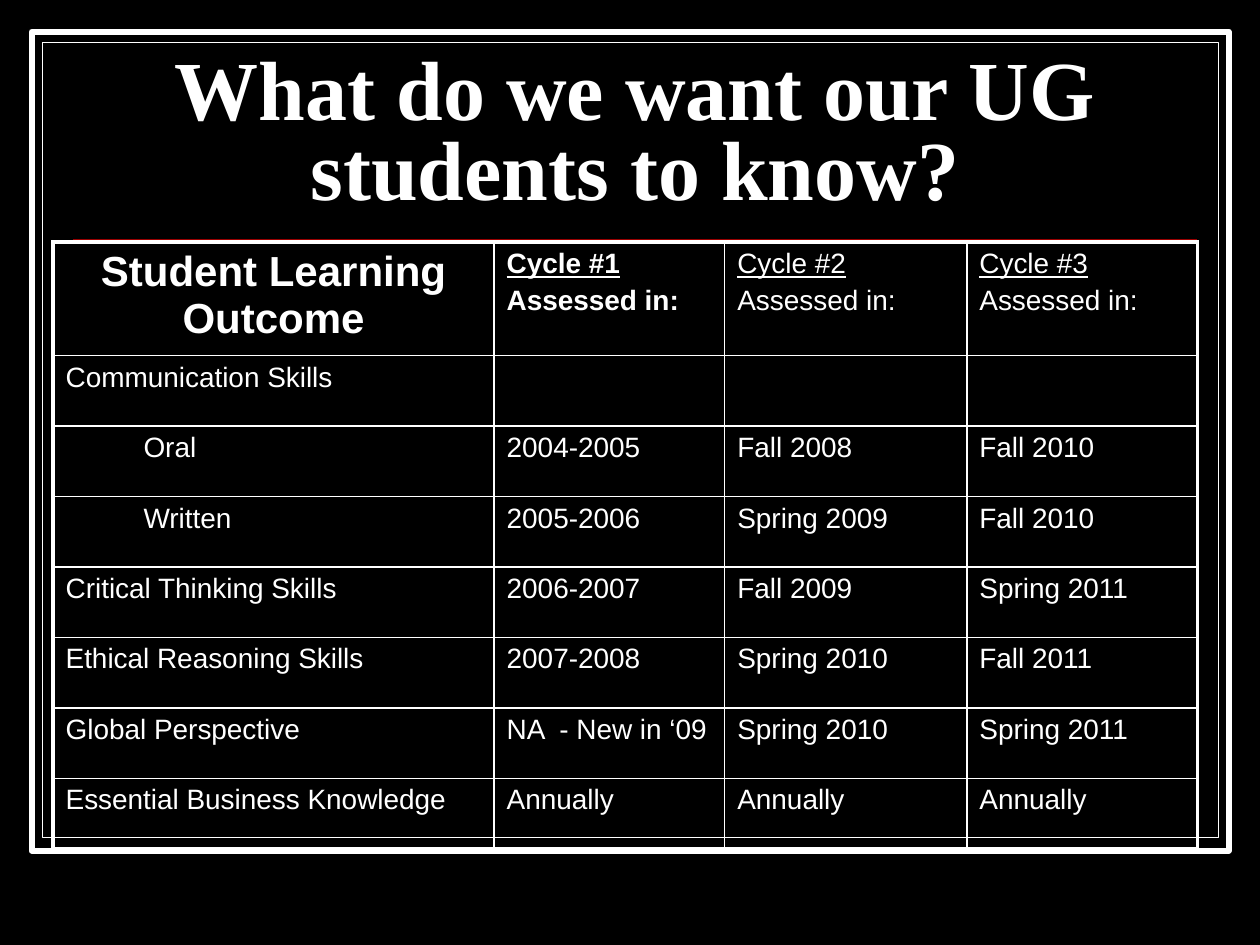
from dataclasses import dataclass

from lxml.etree import SubElement
from pptx import Presentation
from pptx.dml.color import RGBColor
from pptx.enum.shapes import MSO_CONNECTOR as Connector, MSO_SHAPE as Preset
from pptx.enum.text import MSO_ANCHOR as Anchor, MSO_AUTO_SIZE as AutoSize, PP_ALIGN as Align
from pptx.oxml.ns import qn
from pptx.slide import Slide
from pptx.table import _Cell as Cell
from pptx.util import Cm, Pt


@dataclass(frozen=True)
class Theme:
    """Colours, fonts and sizes in points."""
    ground: RGBColor = RGBColor(0, 0, 0)
    ink: RGBColor = RGBColor(255, 255, 255)
    rule: RGBColor = RGBColor(0x99, 0, 0)
    title_font: str = "Times New Roman"
    table_font: str = "Arial"
    title_size: float = 48
    heading_size: float = 24
    body_size: float = 16
    thin: float = 1
    thick: float = 2.25


@dataclass(frozen=True)
class Frame:
    """A framing rectangle in centimetres, with its line width in points."""
    left: float
    top: float
    width: float
    height: float
    line: float


@dataclass(frozen=True)
class Outcome:
    """A learning outcome and when each cycle assesses it."""
    skill: str
    cycles: tuple[str, str, str] = ("", "", "")
    nested: bool = False


THEME = Theme()
FRAMES = (Frame(0.64, 0.64, 24.13, 16.51, 3.5), Frame(0.86, 0.86, 23.7, 16.03, 0.75))
CYCLE_NAMES = ("Cycle #1", "Cycle #2", "Cycle #3")
OUTCOMES = (
    Outcome("Communication Skills"),
    Outcome("Oral", ("2004-2005", "Fall 2008", "Fall 2010"), nested=True),
    Outcome("Written", ("2005-2006", "Spring 2009", "Fall 2010"), nested=True),
    Outcome("Critical Thinking Skills", ("2006-2007", "Fall 2009", "Spring 2011")),
    Outcome("Ethical Reasoning Skills", ("2007-2008", "Spring 2010", "Fall 2011")),
    Outcome("Global Perspective", ("NA  - New in ‘09", "Spring 2010", "Spring 2011")),
    Outcome("Essential Business Knowledge", ("Annually",) * 3),
)
COLUMN_WIDTHS = (8.89, 4.65, 4.88, 4.65)
HEADER_HEIGHT, ROW_HEIGHT = 2.29, 1.42
NESTED_INDENT = 1.57


def draw_frame(slide: Slide, frame: Frame) -> None:
    """Draw one framing rectangle."""
    border = slide.shapes.add_shape(
        Preset.RECTANGLE, Cm(frame.left), Cm(frame.top), Cm(frame.width), Cm(frame.height))
    border.shadow.inherit = False
    border.fill.solid()
    border.fill.fore_color.rgb = THEME.ground
    border.line.color.rgb = THEME.ink
    border.line.width = Pt(frame.line)


def draw_rule(slide: Slide) -> None:
    """Draw the rule beneath the title."""
    rule = slide.shapes.add_connector(
        Connector.STRAIGHT, Cm(1.47), Cm(4.83), Cm(24.13), Cm(4.83))
    rule.line.color.rgb = THEME.rule
    rule.line.width = Pt(THEME.thin)
    SubElement(rule._element.spPr, qn("a:effectLst"))


def place_title(slide: Slide, wording: str) -> None:
    """Fill the title placeholder and bring it in front of the frames."""
    title = slide.shapes.title
    title.left, title.top, title.width, title.height = Cm(1.47), Cm(1.32), Cm(22.66), Cm(3.18)
    slide.shapes._spTree.append(title._element)
    body = title.text_frame
    body.text = wording
    body.word_wrap = True
    body.auto_size = AutoSize.NONE
    body.vertical_anchor = Anchor.BOTTOM
    heading = body.paragraphs[0]
    heading.alignment = Align.CENTER
    heading.line_spacing = 0.8
    font = heading.runs[0].font
    font.name, font.size, font.bold = THEME.title_font, Pt(THEME.title_size), True
    font.color.rgb = THEME.ink


def write_cell(cell: Cell, wording: str, size: float = THEME.body_size, bold: bool = False) -> None:
    """Write one table cell without a fill."""
    cell.fill.background()
    cell.text_frame.text = wording
    for paragraph in cell.text_frame.paragraphs:
        paragraph.space_before = Pt(size * 0.2)
        paragraph.font.size = Pt(size)
        for run in paragraph.runs:
            run.font.name, run.font.size, run.font.bold = THEME.table_font, Pt(size), bold
            run.font.color.rgb = THEME.ink


def border_cell(cell: Cell, outer_edges: dict[str, bool]) -> None:
    """Rule the four sides of a cell, thicker on the outside of the table."""
    properties = cell._tc.get_or_add_tcPr()
    for position, (side, outer) in enumerate(outer_edges.items()):
        width = Pt(THEME.thick if outer else THEME.thin)
        edge = SubElement(properties, qn(f"a:{side}"), w=str(width))
        fill = SubElement(edge, qn("a:solidFill"))
        SubElement(fill, qn("a:srgbClr"), val=str(THEME.ink))
        properties.insert(position, edge)


def draw_schedule(slide: Slide) -> None:
    """Draw the table of outcomes and assessment cycles."""
    rows, columns = len(OUTCOMES) + 1, len(COLUMN_WIDTHS)
    heights = (HEADER_HEIGHT,) + (ROW_HEIGHT,) * len(OUTCOMES)
    schedule = slide.shapes.add_table(
        rows, columns, Cm(1.07), Cm(4.88), Cm(sum(COLUMN_WIDTHS)), Cm(sum(heights))).table
    schedule.first_row = schedule.horz_banding = False
    for column, width in zip(schedule.columns, COLUMN_WIDTHS):
        column.width = Cm(width)
    for row, height in zip(schedule.rows, heights):
        row.height = Cm(height)

    corner = schedule.cell(0, 0)
    write_cell(corner, "Student Learning Outcome", THEME.heading_size, bold=True)
    corner.text_frame.paragraphs[0].alignment = Align.CENTER
    for column, cycle in enumerate(CYCLE_NAMES, start=1):
        header = schedule.cell(0, column)
        write_cell(header, f"{cycle}\nAssessed in:", bold=column == 1)
        header.text_frame.paragraphs[0].runs[0].font.underline = True

    for row, outcome in enumerate(OUTCOMES, start=1):
        for column, wording in enumerate((outcome.skill, *outcome.cycles)):
            write_cell(schedule.cell(row, column), wording)
        if outcome.nested:
            skill = schedule.cell(row, 0).text_frame.paragraphs[0]
            skill._p.get_or_add_pPr().set("marL", str(Cm(NESTED_INDENT)))

    for row in range(rows):
        for column in range(columns):
            border_cell(schedule.cell(row, column), {
                "lnL": column == 0, "lnR": column == columns - 1,
                "lnT": row == 0, "lnB": row == rows - 1})


def main() -> None:
    """Build and save the slide."""
    deck = Presentation()
    deck.slide_width, deck.slide_height = Cm(25.4), Cm(19.05)
    slide = deck.slides.add_slide(deck.slide_layouts[5])
    slide.background.fill.solid()
    slide.background.fill.fore_color.rgb = THEME.ground
    for frame in FRAMES:
        draw_frame(slide, frame)
    draw_rule(slide)
    place_title(slide, "What do we want our UG students to know?")
    draw_schedule(slide)
    deck.save("out.pptx")


if __name__ == "__main__":
    main()
